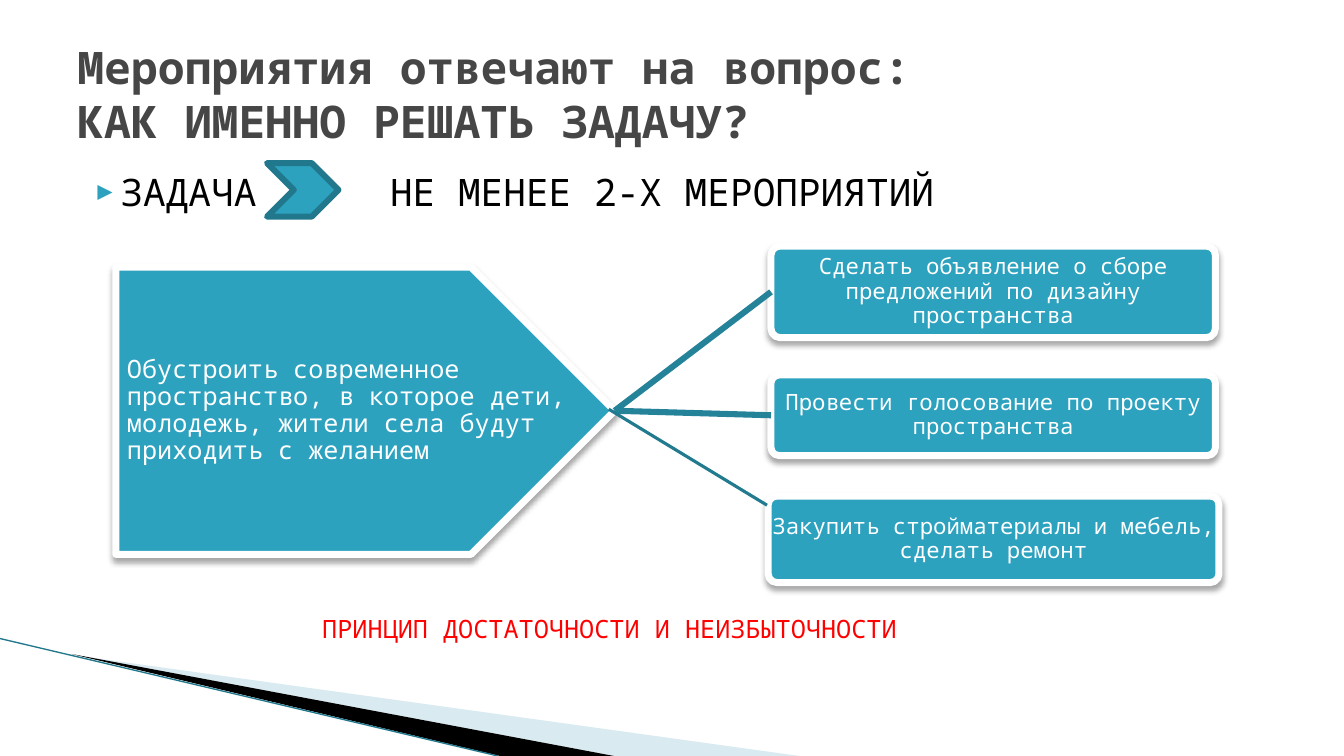
from dataclasses import dataclass
from typing import Any, Optional

from lxml import etree
from pptx import Presentation
from pptx.dml.color import RGBColor
from pptx.enum import shapes as sh, text as tx
from pptx.oxml import ns
from pptx.util import Cm, Pt

TEAL = RGBColor(0x2D, 0xA2, 0xBF)
DEEP = RGBColor(0x21, 0x78, 0x8D)
LINK = RGBColor(0x24, 0x82, 0x99)
THIN = RGBColor(0x22, 0x7A, 0x8F)
PALE = RGBColor(0xA0, 0xCB, 0xDC)
GREY = RGBColor(0x46, 0x46, 0x46)
RED = RGBColor(0xFF, 0x00, 0x00)
BLACK = RGBColor(0x00, 0x00, 0x00)
WHITE = RGBColor(0xFF, 0xFF, 0xFF)
FONT = "Noto Sans Mono"
EDGES = ("margin_left", "margin_top", "margin_right", "margin_bottom")
MID = tx.MSO_ANCHOR.MIDDLE
TOP = tx.MSO_ANCHOR.TOP


@dataclass(frozen=True)
class Box:
    left: float
    top: float
    width: float
    height: float

    def place(self) -> tuple:
        return Cm(self.left), Cm(self.top), Cm(self.width), Cm(self.height)


@dataclass(frozen=True)
class Label:
    box: Box
    words: str
    size: float
    color: RGBColor
    bold: bool = False
    anchor: Any = TOP
    pads: tuple = (0.25, 0.13, 0.25, 0.13)
    lead: float = 1.0
    bullet: bool = False


@dataclass(frozen=True)
class Card:
    box: Box
    words: str


@dataclass(frozen=True)
class Wedge:
    points: tuple
    color: RGBColor
    alpha: Optional[int] = None


WEDGES = (
    Wedge(((1.85, 16.51), (20.14, 19.05), (15.44, 19.05)), PALE, 40),
    Wedge(((1.8, 16.48), (15.47, 19.05), (12.6, 19.05)), BLACK),
)
GOAL = Box(2.92, 6.73, 12.57, 7.24)
MARK = Box(6.73, 4.11, 1.8, 1.35)
CARDS = (
    Card(Box(19.43, 6.2, 11.2, 2.31),
         "Сделать объявление о сборе предложений по дизайну пространства"),
    Card(Box(19.43, 9.45, 11.2, 2.03),
         "Провести голосование по проекту пространства"),
    Card(Box(19.36, 12.5, 11.36, 2.18),
         "Закупить стройматериалы и мебель, сделать ремонт"),
)
LABELS = (
    Label(Box(1.7, 0.76, 30.48, 3.18),
          "Мероприятия отвечают на вопрос:\vКАК ИМЕННО РЕШАТЬ ЗАДАЧУ?",
          32, GREY, bold=True, anchor=MID),
    Label(Box(1.7, 4.11, 5.5, 1.5), "ЗАДАЧА", 27, BLACK, bullet=True),
    Label(Box(9.58, 4.11, 22, 1.5), "НЕ МЕНЕЕ 2-Х МЕРОПРИЯТИЙ", 27, BLACK),
    Label(GOAL, "Обустроить современное пространство, в которое дети, "
          "молодежь, жители села будут приходить с желанием",
          18, WHITE, anchor=MID, pads=(0.28, 0.03, 0.03, 0.03), lead=0.9),
    Label(Box(7.87, 15.32, 20, 1.02),
          "ПРИНЦИП ДОСТАТОЧНОСТИ И НЕИЗБЫТОЧНОСТИ", 18, RED),
)


def assign(item: Any, values: dict) -> None:
    """Set each named attribute on the item."""
    for name, value in values.items():
        setattr(item, name, value)


def child(node: Any, tag: str, **values: Any) -> Any:
    """Add a drawing element with its attributes."""
    return etree.SubElement(node, ns.qn(tag), {k: str(v) for k, v in values.items()})


def write(shape: Any, words: str, size: float, color: RGBColor, anchor: Any,
          pads: tuple, lead: float, align: Any = tx.PP_ALIGN.LEFT,
          bold: bool = False, bullet: bool = False) -> None:
    """Fill a shape with one formatted paragraph."""
    frame = shape.text_frame
    frame.text = words
    assign(frame, {"word_wrap": True, "vertical_anchor": anchor,
                   **{edge: Cm(pad) for edge, pad in zip(EDGES, pads)}})
    para = frame.paragraphs[0]
    assign(para, {"alignment": align, "line_spacing": lead})
    if bullet:
        props = para._p.get_or_add_pPr()
        assign_xml = {"marL": Cm(1.02), "indent": Cm(-0.71)}
        for name, value in assign_xml.items():
            props.set(name, str(int(value)))
        child(child(props, "a:buClr"), "a:srgbClr", val=TEAL)
        child(props, "a:buSzPct", val=68000)
        child(props, "a:buFont", typeface=FONT)
        child(props, "a:buChar", char="▶")
    for run in para.runs:
        assign(run.font, {"name": FONT, "size": Pt(size), "bold": bold})
        run.font.color.rgb = color


def paint(shape: Any, fill: RGBColor, edge: Optional[RGBColor] = None,
          width: float = 0) -> None:
    """Give a shape a flat fill and an optional outline."""
    shape.shadow.inherit = False
    shape.fill.solid()
    shape.fill.fore_color.rgb = fill
    if edge is None:
        shape.line.fill.background()
    else:
        shape.line.color.rgb = edge
        shape.line.width = Pt(width)


def block(slide: Any, kind: Any, box: Box) -> Any:
    """Draw a teal block with a white edge and a soft shadow."""
    shape = slide.shapes.add_shape(kind, *box.place())
    paint(shape, TEAL, WHITE, 5)
    effects = shape._element.spPr.find(ns.qn("a:effectLst"))
    shade = child(effects, "a:outerShdw", blurRad=Pt(4), dist=Pt(3),
                  dir=5400000, rotWithShape=0)
    child(child(shade, "a:srgbClr", val=BLACK), "a:alpha", val=35000)
    return shape


def card(slide: Any, data: Card) -> Any:
    """Draw one rounded activity card."""
    shape = block(slide, sh.MSO_SHAPE.ROUNDED_RECTANGLE, data.box)
    shape.adjustments[0] = 0.1
    write(shape, data.words, 16, WHITE, MID, (0, 0, 0, 0), 0.9,
          align=tx.PP_ALIGN.CENTER)
    return shape


def label(slide: Any, data: Label) -> None:
    """Draw one free text."""
    shape = slide.shapes.add_textbox(*data.box.place())
    write(shape, data.words, data.size, data.color, data.anchor, data.pads,
          data.lead, bold=data.bold, bullet=data.bullet)


def wedge(slide: Any, data: Wedge) -> None:
    """Draw one corner wedge."""
    first, *rest = [(Cm(x), Cm(y)) for x, y in data.points]
    form = slide.shapes.build_freeform(*first)
    form.add_line_segments(rest, close=True)
    shape = form.convert_to_shape()
    paint(shape, data.color)
    if data.alpha is not None:
        tone = shape._element.spPr.find(ns.qn("a:solidFill"))[0]
        child(tone, "a:alpha", val=data.alpha * 1000)


def rule(slide: Any, start: tuple, end: tuple, color: RGBColor,
         width: float) -> Any:
    """Draw one straight line."""
    ends = [Cm(value) for value in (*start, *end)]
    line = slide.shapes.add_connector(sh.MSO_CONNECTOR.STRAIGHT, *ends)
    line.line.color.rgb = color
    line.line.width = Pt(width)
    child(line._element.spPr, "a:effectLst")
    return line


def main() -> None:
    """Build the slide and save it."""
    deck = Presentation()
    assign(deck, {"slide_width": Cm(33.87), "slide_height": Cm(19.05)})
    slide = deck.slides.add_slide(deck.slide_layouts[6])
    for data in WEDGES:
        wedge(slide, data)
    rule(slide, (0, 16.09), (12.55, 19.05), DEEP, 0.95)
    mark = slide.shapes.add_shape(sh.MSO_SHAPE.CHEVRON, *MARK.place())
    paint(mark, TEAL, DEEP, 4.33)
    goal = block(slide, sh.MSO_SHAPE.PENTAGON, GOAL)
    cards = [card(slide, data) for data in CARDS]
    for target in cards[:2]:
        link = rule(slide, (0, 0), (1, 1), LINK, 4.33)
        link.begin_connect(goal, 3)
        link.end_connect(target, 1)
    rule(slide, (15.34, 10.31), (19.33, 12.73), THIN, 2.25)
    for data in LABELS:
        label(slide, data)
    deck.save("out.pptx")


if __name__ == "__main__":
    main()
